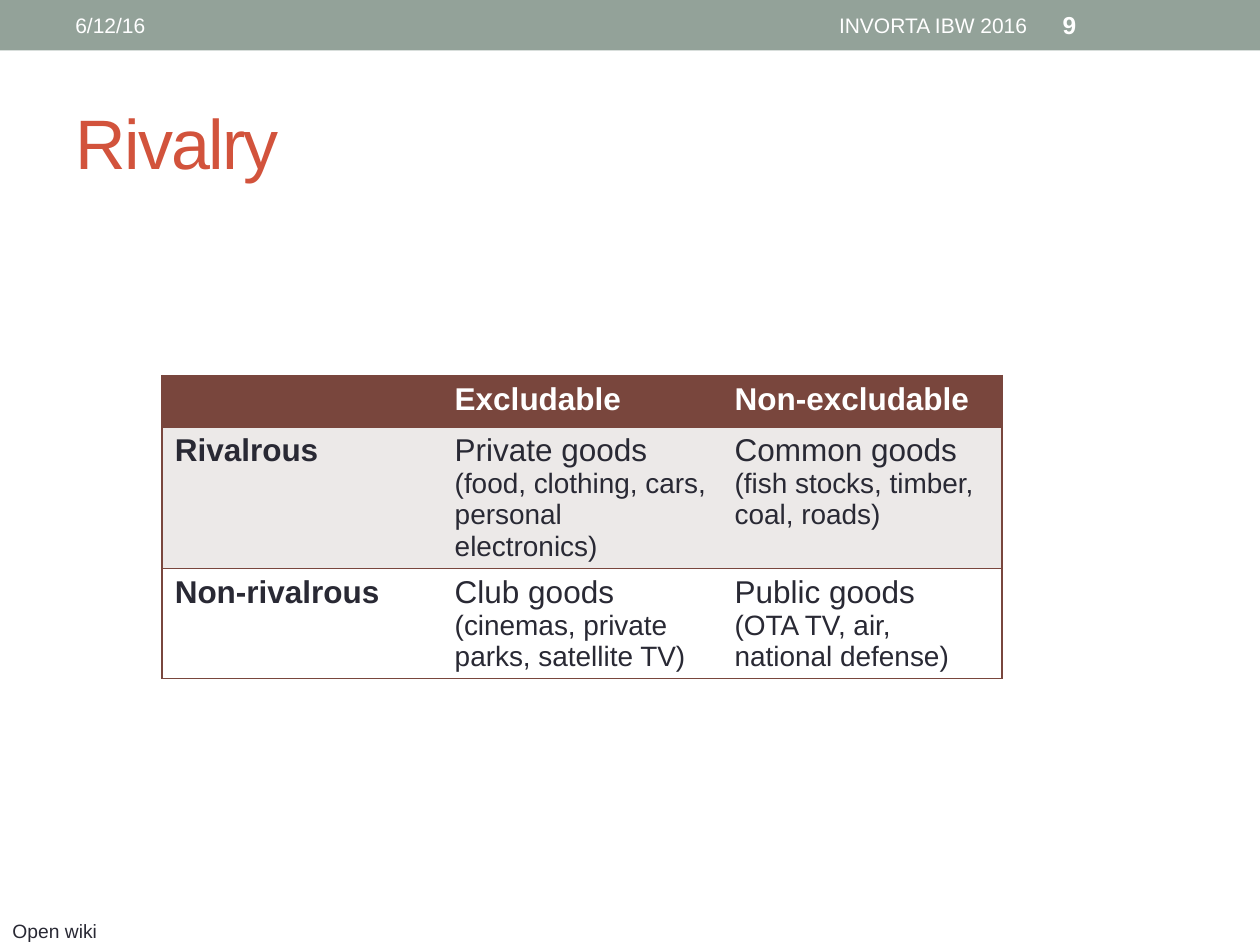
from dataclasses import dataclass

from lxml import etree
from pptx import Presentation
from pptx.dml.color import RGBColor
from pptx.enum.shapes import MSO_SHAPE
from pptx.enum.text import MSO_ANCHOR, MSO_AUTO_SIZE, PP_ALIGN
from pptx.oxml.ns import qn
from pptx.util import Cm, Pt

RECTANGLE = MSO_SHAPE.RECTANGLE
MIDDLE, TOP = MSO_ANCHOR.MIDDLE, MSO_ANCHOR.TOP
LEFT, RIGHT = PP_ALIGN.LEFT, PP_ALIGN.RIGHT
NO_AUTOFIT = MSO_AUTO_SIZE.NONE

FONT = "Arial"
WHITE, INK, BROWN = "FFFFFF", "292934", "79463D"
SAGE, RUST, BAND = "93A299", "D2533C", "ECE9E8"


@dataclass
class Label:
    text: str
    left: float
    top: float
    width: float
    height: float
    size: int
    color: str = WHITE
    bold: bool = False
    align: PP_ALIGN = LEFT
    anchor: MSO_ANCHOR = MIDDLE


@dataclass
class Row:
    cells: list[str]
    height: float
    fill: str
    color: str = INK


LABELS = [
    Label("6/12/16", 1.27, 0.05, 8.05, 0.91, 12),
    Label("INVORTA IBW 2016", 9.53, 0.05, 11.43, 0.91, 12, align=RIGHT),
    Label("9", 21.17, 0.05, 2.96, 0.91, 14, bold=True),
    Label("Open wiki", 0, 18.4, 2.6, 0.65, 11, INK, anchor=TOP),
]

ROWS = [
    Row(["", "Excludable", "Non-excludable"], 1.04, BROWN, WHITE),
    Row(["Rivalrous",
         "Private goods\n(food, clothing, cars, personal electronics)",
         "Common goods\n(fish stocks, timber, coal, roads)"], 2.82, BAND),
    Row(["Non-rivalrous",
         "Club goods\n(cinemas, private parks, satellite TV)",
         "Public goods\n(OTA TV, air, national defense)"], 2.22, WHITE),
]


def rgb(color: str) -> RGBColor:
    return RGBColor.from_string(color)


def format_runs(paragraph, size: int, color: str, bold: bool = False) -> None:
    for run in paragraph.runs:
        run.font.name = FONT
        run.font.size = Pt(size)
        run.font.bold = bold
        run.font.color.rgb = rgb(color)


def draw_label(slide, label: Label) -> None:
    box = slide.shapes.add_textbox(
        Cm(label.left), Cm(label.top), Cm(label.width), Cm(label.height))
    frame = box.text_frame
    frame.word_wrap = True
    frame.vertical_anchor = label.anchor
    frame.text = label.text
    paragraph = frame.paragraphs[0]
    paragraph.alignment = label.align
    format_runs(paragraph, label.size, label.color, label.bold)


def draw_header_band(slide) -> None:
    band = slide.shapes.add_shape(RECTANGLE, 0, 0, Cm(25.4), Cm(1.02))
    band.shadow.inherit = False
    band.fill.solid()
    band.fill.fore_color.rgb = rgb(SAGE)
    band.line.fill.background()


def draw_title(slide, text: str) -> None:
    title = slide.shapes.title
    title.left, title.top = Cm(1.27), Cm(1.49)
    title.width, title.height = Cm(22.86), Cm(2.74)
    frame = title.text_frame
    frame.text = text
    frame.auto_size = NO_AUTOFIT
    frame.vertical_anchor = MIDDLE
    paragraph = frame.paragraphs[0]
    paragraph.alignment = LEFT
    format_runs(paragraph, 40, RUST)
    paragraph.runs[0].font._element.set("spc", "-100")


def set_borders(cell, visible: dict[str, bool]) -> None:
    properties = cell._tc.get_or_add_tcPr()
    for side, shown in visible.items():
        line = etree.SubElement(properties, qn(f"a:ln{side}"), w=str(Pt(1)))
        if shown:
            fill = etree.SubElement(line, qn("a:solidFill"))
            etree.SubElement(fill, qn("a:srgbClr"), val=BROWN)
        else:
            etree.SubElement(line, qn("a:noFill"))


def draw_table(slide, rows: list[Row]) -> None:
    column_count = len(rows[0].cells)
    table = slide.shapes.add_table(
        len(rows), column_count, Cm(3.27), Cm(7.57), Cm(16.93),
        Cm(sum(row.height for row in rows))).table
    for row_index, row in enumerate(rows):
        table.rows[row_index].height = Cm(row.height)
        for column, text in enumerate(row.cells):
            cell = table.cell(row_index, column)
            set_borders(cell, {"L": column == 0, "R": column == column_count - 1,
                               "T": True, "B": True})
            cell.fill.solid()
            cell.fill.fore_color.rgb = rgb(row.fill)
            cell.text_frame.text = text
            heading = row_index == 0 or column == 0
            for line, paragraph in enumerate(cell.text_frame.paragraphs):
                format_runs(paragraph, 16 if line else 18, row.color, heading)


def main() -> None:
    presentation = Presentation()
    presentation.slide_width, presentation.slide_height = Cm(25.4), Cm(19.05)
    slide = presentation.slides.add_slide(presentation.slide_layouts[5])
    draw_header_band(slide)
    draw_title(slide, "Rivalry")
    draw_table(slide, ROWS)
    for label in LABELS:
        draw_label(slide, label)
    presentation.save("out.pptx")


if __name__ == "__main__":
    main()
